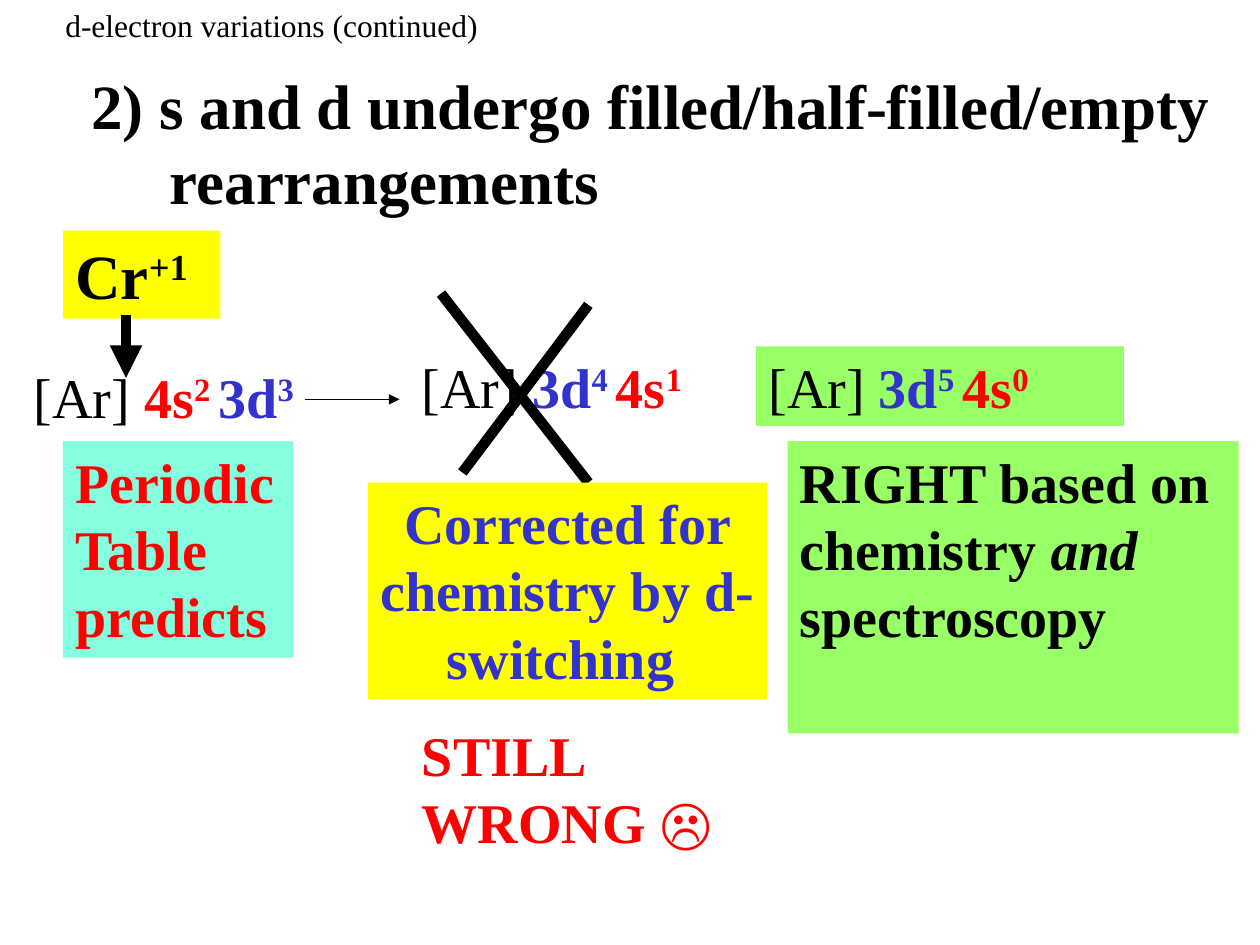
from dataclasses import dataclass
from typing import Optional

from pptx import Presentation
from pptx.dml.color import RGBColor
from pptx.enum.shapes import MSO_CONNECTOR, MSO_SHAPE
from pptx.enum.text import MSO_ANCHOR, PP_ALIGN
from pptx.oxml.ns import qn
from pptx.util import Inches, Pt
from lxml.etree import SubElement

BLACK = RGBColor(0x00, 0x00, 0x00)
RED = RGBColor(0xFF, 0x00, 0x00)
BLUE = RGBColor(0x33, 0x33, 0xCC)
YELLOW = RGBColor(0xFF, 0xFF, 0x00)
GREEN = RGBColor(0x99, 0xFF, 0x66)
AQUA = RGBColor(0x85, 0xFF, 0xE0)
FONT = "Times New Roman"


@dataclass
class Span:
    text: str
    color: RGBColor = BLACK
    bold: bool = True
    italic: bool = False
    sup: bool = False


@dataclass
class Para:
    spans: list[Span]
    indent: float = 0
    before: int = 50  # percent of a line


@dataclass
class Box:
    left: float
    top: float
    width: float
    height: float
    paras: list[Para]
    size: int = 32
    fill: Optional[RGBColor] = None
    align: PP_ALIGN = PP_ALIGN.LEFT
    anchor: MSO_ANCHOR = MSO_ANCHOR.TOP


@dataclass
class Line:
    start: tuple[float, float]
    end: tuple[float, float]
    weight: float
    arrow: bool = False


def shell(first: tuple[str, RGBColor], second: tuple[str, RGBColor],
          counts: tuple[str, str]) -> list[Para]:
    """Argon core followed by two subshells with raised electron counts."""
    return [Para([Span("[Ar] ", bold=False),
                  Span(first[0], first[1]),
                  Span(counts[0] + " ", first[1], sup=True),
                  Span(second[0], second[1]),
                  Span(counts[1], second[1], sup=True)])]


def plain(text: str, color: RGBColor) -> list[Para]:
    return [Para([Span(text, color)])]


def add_box(slide, box: Box) -> None:
    place = [Inches(v) for v in (box.left, box.top, box.width, box.height)]
    if box.fill is None:
        shape = slide.shapes.add_textbox(*place)
    else:
        shape = slide.shapes.add_shape(MSO_SHAPE.RECTANGLE, *place)
        shape.shadow.inherit = False
        shape.fill.solid()
        shape.fill.fore_color.rgb = box.fill
        shape.line.fill.background()
    frame = shape.text_frame
    frame.word_wrap = True
    frame.vertical_anchor = box.anchor
    for i, para in enumerate(box.paras):
        p = frame.add_paragraph() if i else frame.paragraphs[0]
        p.alignment = box.align
        props = p._p.get_or_add_pPr()
        if para.indent:
            props.set("marL", str(Inches(para.indent)))
        if para.before:
            gap = SubElement(props, qn("a:spcBef"))
            SubElement(gap, qn("a:spcPct")).set("val", str(para.before * 1000))
        for span in para.spans:
            run = p.add_run()
            run.text = span.text
            font = run.font
            font.name, font.size = FONT, Pt(box.size)
            font.bold, font.italic = span.bold, span.italic
            font.color.rgb = span.color
            if span.sup:
                run._r.get_or_add_rPr().set("baseline", "30000")


def add_line(slide, line: Line) -> None:
    ends = [Inches(v) for v in (*line.start, *line.end)]
    link = slide.shapes.add_connector(MSO_CONNECTOR.STRAIGHT, *ends)
    link.line.color.rgb = BLACK
    link.line.width = Pt(line.weight)
    if line.arrow:
        tail = SubElement(link.line._get_or_add_ln(), qn("a:tailEnd"))
        tail.set("type", "triangle")
    SubElement(link._element.spPr, qn("a:effectLst"))


S, D = ("4s", RED), ("3d", BLUE)

# Back to front
PARTS = [
    # Title
    Box(0.5, 0.5, 9.25, 1.25,
        [Para([Span("2) s and d undergo filled/half-filled/empty")], 0.125, 0),
         Para([Span("rearrangements")], 0.75, 0)],
        size=36, anchor=MSO_ANCHOR.MIDDLE),
    # Ion
    Box(0.5, 1.83, 1.25, 0.7,
        [Para([Span("Cr"), Span("+1", sup=True)])], size=36, fill=YELLOW),
    # Switched configuration, crossed out
    Box(3.25, 2.75, 2.42, 0.64, shell(D, S, ("4", "1"))),
    Line((4.67, 2.42), (3.67, 3.75), 6),
    Line((3.5, 2.33), (4.67, 3.83), 6),
    # Right configuration
    Box(6, 2.75, 2.92, 0.63, shell(D, S, ("5", "0")), fill=GREEN),
    Box(3.25, 5.67, 2.75, 1.18, plain("STILL WRONG ☹", RED)),
    Box(6.25, 3.5, 3.58, 2.32,
        [Para([Span("RIGHT based on chemistry "),
               Span("and ", italic=True), Span("spectroscopy")])], fill=GREEN),
    # Predicted configuration
    Box(0.17, 2.83, 2.42, 0.64, shell(S, D, ("2", "3"))),
    Line((2.42, 3.17), (3.17, 3.17), 0.75, arrow=True),
    Line((1, 2.5), (1, 3), 6.25, arrow=True),
    Box(0.5, 3.5, 1.83, 1.72, plain("Periodic Table predicts", RED), fill=AQUA),
    Box(2.92, 3.83, 3.17, 1.72,
        plain("Corrected for chemistry by d-switching ", BLUE),
        fill=YELLOW, align=PP_ALIGN.CENTER),
    # Running head
    Box(0.42, 0, 4.17, 0.4,
        [Para([Span("d-electron variations (continued)", bold=False)], before=0)],
        size=18),
]


def main() -> None:
    deck = Presentation()
    deck.slide_width, deck.slide_height = Inches(10), Inches(7.5)
    slide = deck.slides.add_slide(deck.slide_layouts[6])
    for part in PARTS:
        if isinstance(part, Box):
            add_box(slide, part)
        else:
            add_line(slide, part)
    deck.save("out.pptx")


if __name__ == "__main__":
    main()
